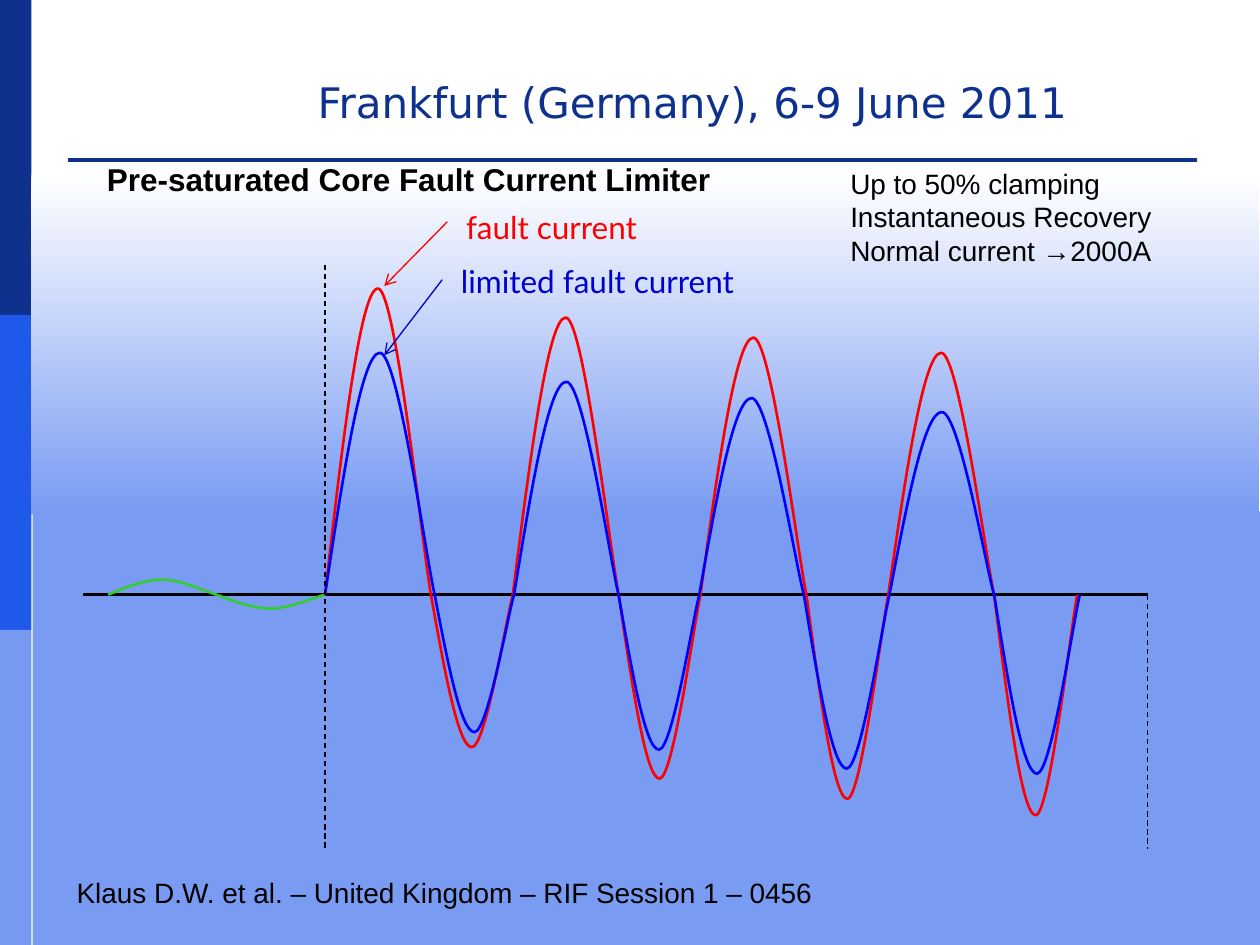
from lxml.etree import SubElement
from pptx import Presentation
from pptx.dml.color import RGBColor
from pptx.enum.dml import MSO_LINE
from pptx.enum.shapes import MSO_CONNECTOR, MSO_SHAPE
from pptx.enum.text import MSO_ANCHOR, MSO_AUTO_SIZE, PP_ALIGN
from pptx.oxml.ns import qn
from pptx.util import Inches, Pt

NAVY, SKY, BLACK, RED = "0E318D", "799BF2", "000000", "FF0000"
LABEL_BLUE = "0000CC"
WIDTH, HEIGHT = 10, 7.5
SIDEBAR = 0.25
AXIS_Y, FAULT_X, END_X = 4.72, 2.58, 9.11

TITLE = ("Frankfurt (Germany), 6-9 June 2011", (2.42, 0.56, 6.58, 0.5),
         dict(size=Pt(24), name="DejaVu Sans", bold=False), NAVY)
TITLE_RULE = ((0.54, 1.07, 8.96, 0.2), NAVY, 2.25)

# lines of text, place, font, colour
TEXTS = [
    (["Klaus D.W. et al. – United Kingdom – RIF Session 1 – 0456"],
     (0.51, 6.9, 7.88, 0.37), dict(size=Pt(16), name="Arial"), BLACK),
    (["Pre-saturated Core Fault Current Limiter"],
     (0.75, 1.22, 5.35, 0.4), dict(size=Pt(18), name="Arial", bold=True), BLACK),
    (["fault current"],
     (3.6, 1.6, 1.69, 0.4), dict(size=Pt(18), name="Lato"), RED),
    (["limited fault current"],
     (3.56, 2.03, 2.58, 0.4), dict(size=Pt(18), name="Lato"), LABEL_BLUE),
    (["Up to 50% clamping", "Instantaneous Recovery", "Normal current →2000A"],
     (6.65, 1.27, 2.7, 0.91), dict(size=Pt(16), name="Arial"), BLACK),
]

# colour, axis crossings, crest between each pair of crossings
WAVES = [
    ("33CC33", [0.86, 1.72, FAULT_X], [4.6, 4.83]),
    (RED, [FAULT_X, 3.42, 4.07, 4.91, 5.56, 6.4, 7.05, 7.89, 8.55],
     [2.29, 5.93, 2.52, 6.18, 2.68, 6.34, 2.8, 6.47]),
    ("0000FF", [FAULT_X, 3.45, 4.08, 4.91, 5.55, 6.38, 7.06, 7.89, 8.57],
     [2.8, 5.81, 3.03, 5.95, 3.16, 6.1, 3.27, 6.14]),
]

# Bezier points of a half wave, as shares of its width and height
HALF_WAVE = [(0, 0), (1 / 6, 1 / 2), (1 / 3, 1), (1 / 2, 1),
             (2 / 3, 1), (11 / 12, 1 / 6), (1, 0)]

# start, end, colour, width, style
AXIS = ((0.66, AXIS_Y), (END_X, AXIS_Y), BLACK, 1.5, None)
MARKERS = [
    ((FAULT_X, 2.1), (FAULT_X, 6.74), BLACK, 0.75, "dash"),
    ((END_X, AXIS_Y), (END_X, 6.74), BLACK, 0.75, "dash"),
    ((3.55, 1.76), (3.05, 2.27), RED, 0.75, "arrow"),
    ((3.51, 2.22), (3.05, 2.82), LABEL_BLUE, 0.75, "arrow"),
]


def rgb(value):
    return RGBColor.from_string(value)


def inches(values):
    return [Inches(value) for value in values]


def set_font(font, settings, colour):
    for key, value in settings.items():
        setattr(font, key, value)
    font.color.rgb = rgb(colour)


def add_panel(slide, place, colour):
    panel = slide.shapes.add_shape(MSO_SHAPE.RECTANGLE, *inches(place))
    panel.shadow.inherit = False
    panel.line.fill.background()
    panel.fill.solid()
    panel.fill.fore_color.rgb = rgb(colour)
    return panel


def add_rule_table(slide, place, colour, width):
    """Add an empty one-cell table that shows only its bottom border."""
    table = slide.shapes.add_table(1, 1, *inches(place)).table
    table.first_row = table.horz_banding = False
    cell = table.cell(0, 0)
    for side in ("left", "right", "top", "bottom"):
        setattr(cell, f"margin_{side}", 0)
    SubElement(cell.text_frame.paragraphs[0]._p, qn("a:endParaRPr"), sz="800")
    properties = cell._tc.get_or_add_tcPr()
    for side in ("lnL", "lnR", "lnT"):
        SubElement(SubElement(properties, qn(f"a:{side}")), qn("a:noFill"))
    border = SubElement(properties, qn("a:lnB"), w=str(Pt(width)))
    SubElement(SubElement(border, qn("a:solidFill")), qn("a:srgbClr"), val=colour)
    cell.fill.background()


def add_line(slide, start, end, colour, width, style):
    line = slide.shapes.add_connector(MSO_CONNECTOR.STRAIGHT, *inches(start + end))
    line.line.color.rgb = rgb(colour)
    line.line.width = Pt(width)
    if style == "dash":
        line.line.dash_style = MSO_LINE.DASH
    elif style == "arrow":
        SubElement(line.line._get_or_add_ln(), qn("a:tailEnd"), type="arrow")
    SubElement(line._element.spPr, qn("a:effectLst"))


def add_half_wave(slide, left, right, crest, colour):
    """Draw an outline through the points, then turn each three lines into a curve."""
    points = [(Inches(left + x * (right - left)), Inches(AXIS_Y + y * (crest - AXIS_Y)))
              for x, y in HALF_WAVE]
    builder = slide.shapes.build_freeform(*points[0])
    builder.add_line_segments(points[1:], close=False)
    wave = builder.convert_to_shape()
    wave.shadow.inherit = False
    wave.fill.background()
    wave.line.color.rgb = rgb(colour)
    wave.line.width = Pt(1.5)
    outline = next(wave._element.iter(qn("a:pathLst")))[0]
    segments = outline.findall(qn("a:lnTo"))
    for first in range(0, len(segments), 3):
        curve = SubElement(outline, qn("a:cubicBezTo"))
        for segment in segments[first:first + 3]:
            curve.append(segment[0])
            outline.remove(segment)


def add_text(slide, lines, place, font, colour):
    frame = slide.shapes.add_textbox(*inches(place)).text_frame
    frame.word_wrap = True
    frame.text = "\n".join(lines)
    for paragraph in frame.paragraphs:
        set_font(paragraph.font, font, colour)


def place_title(slide, text, place, font, colour):
    title = slide.shapes.title
    title.left, title.top, title.width, title.height = inches(place)
    frame = title.text_frame
    frame.text = text
    frame.word_wrap = True
    frame.auto_size = MSO_AUTO_SIZE.NONE
    frame.vertical_anchor = MSO_ANCHOR.MIDDLE
    frame.paragraphs[0].alignment = PP_ALIGN.LEFT
    set_font(frame.paragraphs[0].font, font, colour)


def main():
    deck = Presentation()
    deck.slide_width, deck.slide_height = inches((WIDTH, HEIGHT))
    slide = deck.slides.add_slide(deck.slide_layouts[5])

    band = HEIGHT / 3
    for row, colour in enumerate([NAVY, "1F59E9", "779AF1"]):
        add_panel(slide, (0, row * band, SIDEBAR, band), colour)
    add_rule_table(slide, *TITLE_RULE)
    place_title(slide, *TITLE)

    add_panel(slide, (0.26, 4.06, 9.74, 3.44), SKY)
    fade = add_panel(slide, (SIDEBAR, 1.39, 9.74, 2.69), SKY).fill
    fade.gradient()
    fade.gradient_angle = 270
    for stop, colour in zip(fade.gradient_stops, ["FFFFFF", SKY]):
        stop.color.rgb = rgb(colour)

    add_line(slide, *AXIS)
    for colour, crossings, crests in WAVES:
        for left, right, crest in zip(crossings, crossings[1:], crests):
            add_half_wave(slide, left, right, crest, colour)
    for marker in MARKERS:
        add_line(slide, *marker)
    for text in TEXTS:
        add_text(slide, *text)

    deck.save("out.pptx")


if __name__ == "__main__":
    main()
